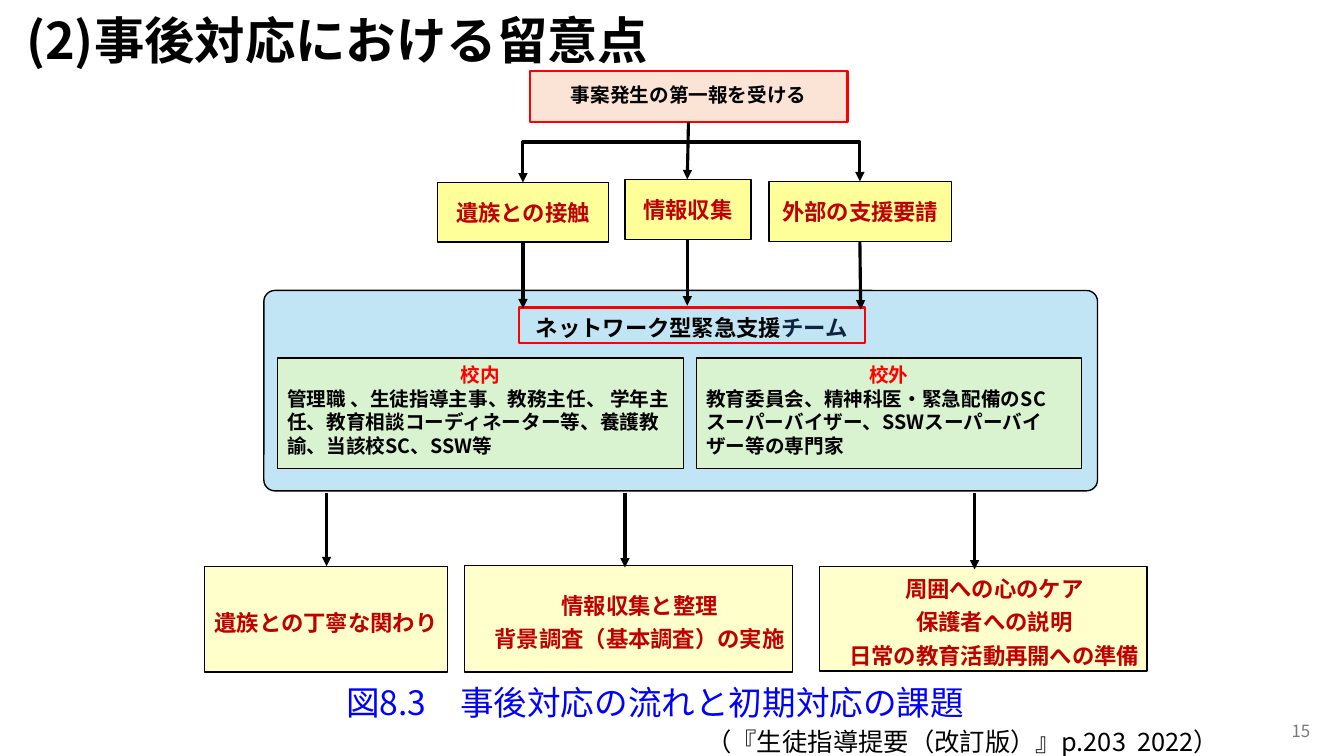
from dataclasses import dataclass

from lxml import etree
from pptx import Presentation
from pptx.dml.color import RGBColor
from pptx.enum.shapes import MSO_CONNECTOR, MSO_SHAPE
from pptx.enum.text import MSO_ANCHOR, MSO_AUTO_SIZE, PP_ALIGN
from pptx.oxml.ns import qn
from pptx.util import Cm, Pt

RECT, ROUNDED = MSO_SHAPE.RECTANGLE, MSO_SHAPE.ROUNDED_RECTANGLE
STRAIGHT, ELBOW = MSO_CONNECTOR.STRAIGHT, MSO_CONNECTOR.ELBOW
TOP, MIDDLE = MSO_ANCHOR.TOP, MSO_ANCHOR.MIDDLE
LEFT, CENTER, RIGHT = PP_ALIGN.LEFT, PP_ALIGN.CENTER, PP_ALIGN.RIGHT
NO_AUTOFIT = MSO_AUTO_SIZE.NONE
TITLE_ONLY = 5


@dataclass(frozen=True)
class Theme:
    """Font, colours and type sizes of the slide."""
    font: str = "Noto Sans CJK JP"
    black: str = "000000"
    red: str = "FF0000"
    dark_red: str = "C00000"
    navy: str = "0F243E"
    blue: str = "0000FF"
    grey: str = "797979"
    peach: str = "FBE3D6"
    yellow: str = "FFFF99"
    cream: str = "FFFFCC"
    sky: str = "C1E5F5"
    green: str = "D9F2D0"
    title: float = 36
    caption: float = 24
    source: float = 18.1
    label: float = 16
    detail: float = 14
    number: float = 12


THEME = Theme()

RESPONSES = [
    ("遺族との接触", (11.02, 4.6, 4.32, 1.5)),
    ("情報収集", (15.75, 4.52, 3.18, 1.52)),
    ("外部の支援要請", (19.38, 4.57, 4.6, 1.52)),
]
MEMBERS = [
    ("校内", "管理職 、生徒指導主事、教務主任、 学年主任、教育相談コーディネーター等、"
     "養護教諭、当該校SC、SSW等", (6.99, 9.02, 10.24, 2.79)),
    ("校外", "教育委員会、精神科医・緊急配備のSCスーパーバイザー、"
     "SSWスーパーバイザー等の専門家", (17.55, 9.02, 9.7, 2.79)),
]
TASKS = [
    ("遺族との丁寧な関わり", (5.16, 14.27, 6.12, 2.67)),
    ("　情報収集と整理\n　背景調査（基本調査）の実施", (11.71, 14.25, 8.26, 2.69)),
    ("　周囲への心のケア\n　保護者への説明\n　日常の教育活動再開への準備",
     (20.65, 14.27, 8.26, 2.64)),
]
ARROWS = [
    (STRAIGHT, 17.35, 3.07, 17.32, 4.52),
    (ELBOW, 17.35, 3.58, 13.18, 4.6),
    (ELBOW, 17.35, 3.58, 21.67, 4.57),
    (STRAIGHT, 13.18, 6.1, 13.18, 7.77),
    (STRAIGHT, 17.32, 6.05, 17.32, 7.7),
    (STRAIGHT, 21.67, 6.1, 21.69, 7.8),
    (STRAIGHT, 8.23, 12.42, 8.23, 14.27),
    (STRAIGHT, 15.75, 12.42, 15.75, 14.3),
    (STRAIGHT, 24.56, 12.42, 24.56, 14.35),
]


def rgb(colour):
    """Turn a hex string into a colour."""
    return RGBColor.from_string(colour)


def style_run(run, size, colour, bold):
    """Give a run its font for Latin and East Asian text."""
    run.font.size = Pt(size)
    run.font.bold = bold
    run.font.color.rgb = rgb(colour)
    run.font.name = THEME.font
    east_asian = etree.Element(qn("a:ea"), typeface=THEME.font)
    run.font._element.find(qn("a:latin")).addnext(east_asian)


def write(holder, text, size, colour, bold=True, align=CENTER, anchor=MIDDLE,
          spacing=None, margins=(0.25, 0.13, 0.25, 0.13)):
    """Fill a shape with evenly formatted paragraphs."""
    frame = holder.text_frame
    frame.text = text
    frame.word_wrap = True
    frame.auto_size = NO_AUTOFIT
    frame.vertical_anchor = anchor
    (frame.margin_left, frame.margin_top,
     frame.margin_right, frame.margin_bottom) = map(Cm, margins)
    for paragraph in frame.paragraphs:
        paragraph.alignment = align
        paragraph.line_spacing = spacing
        for run in paragraph.runs:
            style_run(run, size, colour, bold)


def add_box(slide, place, fill, line=THEME.black, width=1, kind=RECT):
    """Add an outlined box, unfilled when fill is None."""
    box = slide.shapes.add_shape(kind, *map(Cm, place))
    box.shadow.inherit = False
    if fill:
        box.fill.solid()
        box.fill.fore_color.rgb = rgb(fill)
    else:
        box.fill.background()
    box.line.color.rgb = rgb(line)
    box.line.width = Pt(width)
    return box


def add_label(slide, place, text, size, colour, align=LEFT, anchor=MIDDLE):
    """Add plain text without a frame."""
    label = slide.shapes.add_textbox(*map(Cm, place))
    write(label, text, size, colour, False, align, anchor)


def add_arrow(slide, kind, *ends):
    """Add an arrow; elbows turn once, from across to down."""
    arrow = slide.shapes.add_connector(kind, *map(Cm, ends))
    arrow.line.color.rgb = rgb(THEME.black)
    arrow.line.width = Pt(2.25)
    properties = arrow._element.spPr
    if kind == ELBOW:
        properties.find(qn("a:prstGeom")).set("prst", "bentConnector2")
    etree.SubElement(properties.find(qn("a:ln")), qn("a:tailEnd"), type="triangle")
    etree.SubElement(properties, qn("a:effectLst"))


def add_title(slide, text):
    """Move and format the title placeholder."""
    title = slide.shapes.title
    title.left, title.top, title.width, title.height = map(Cm, (0.41, 0.1, 16.94, 1.8))
    write(title, text, THEME.title, THEME.black, align=LEFT)


def add_members(slide, heading, people, place):
    """Add a team box with a red heading over its members."""
    box = add_box(slide, place, THEME.green)
    write(box, f"{heading}\n{people}", THEME.detail, THEME.black, align=LEFT, anchor=TOP)
    first = box.text_frame.paragraphs[0]
    first.alignment = CENTER
    first.runs[0].font.color.rgb = rgb(THEME.red)


def add_team_name(slide):
    """Add the framed team name in two colours."""
    name = add_box(slide, (13.08, 7.75, 8.71, 0.89), None, THEME.red, 1.5)
    write(name, "ネットワーク型緊急支援", THEME.label, THEME.black,
          anchor=TOP, spacing=1.25, margins=(0, 0, 0, 0))
    ending = name.text_frame.paragraphs[0].add_run()
    ending.text = "チーム"
    style_run(ending, THEME.label, THEME.navy, True)


def main():
    """Build the slide and save it."""
    deck = Presentation()
    deck.slide_width, deck.slide_height = Cm(33.87), Cm(19.05)
    slide = deck.slides.add_slide(deck.slide_layouts[TITLE_ONLY])
    add_title(slide, "(2)事後対応における留意点")

    panel = add_box(slide, (6.65, 7.32, 21.01, 5.05), THEME.sky, kind=ROUNDED)
    panel.adjustments[0] = 0.055
    report = add_box(slide, (13.36, 1.78, 8, 1.3), THEME.peach, THEME.red, 1.5)
    write(report, "事案発生の第一報を受ける", THEME.detail, THEME.black,
          margins=(0.4, 0, 0.4, 0.08))
    for text, place in RESPONSES:
        write(add_box(slide, place, THEME.yellow), text, THEME.label, THEME.dark_red)
    for heading, people, place in MEMBERS:
        add_members(slide, heading, people, place)
    for text, place in TASKS:
        write(add_box(slide, place, THEME.cream), text, THEME.label, THEME.dark_red,
              spacing=1.25, margins=(0, 0, 0, 0))
    add_team_name(slide)
    for arrow in ARROWS:
        add_arrow(slide, *arrow)

    add_label(slide, (8.48, 16.7, 24.79, 2), "図8.3　事後対応の流れと初期対応の課題",
              THEME.caption, THEME.blue)
    add_label(slide, (17.55, 18.16, 14.68, 0.89), "（『生徒指導提要（改訂版）』p.203  2022）",
              THEME.source, THEME.black, anchor=TOP)
    add_label(slide, (25.65, 17.91, 7.62, 1.02), "15", THEME.number, THEME.grey, RIGHT)
    deck.save("out.pptx")


if __name__ == "__main__":
    main()
